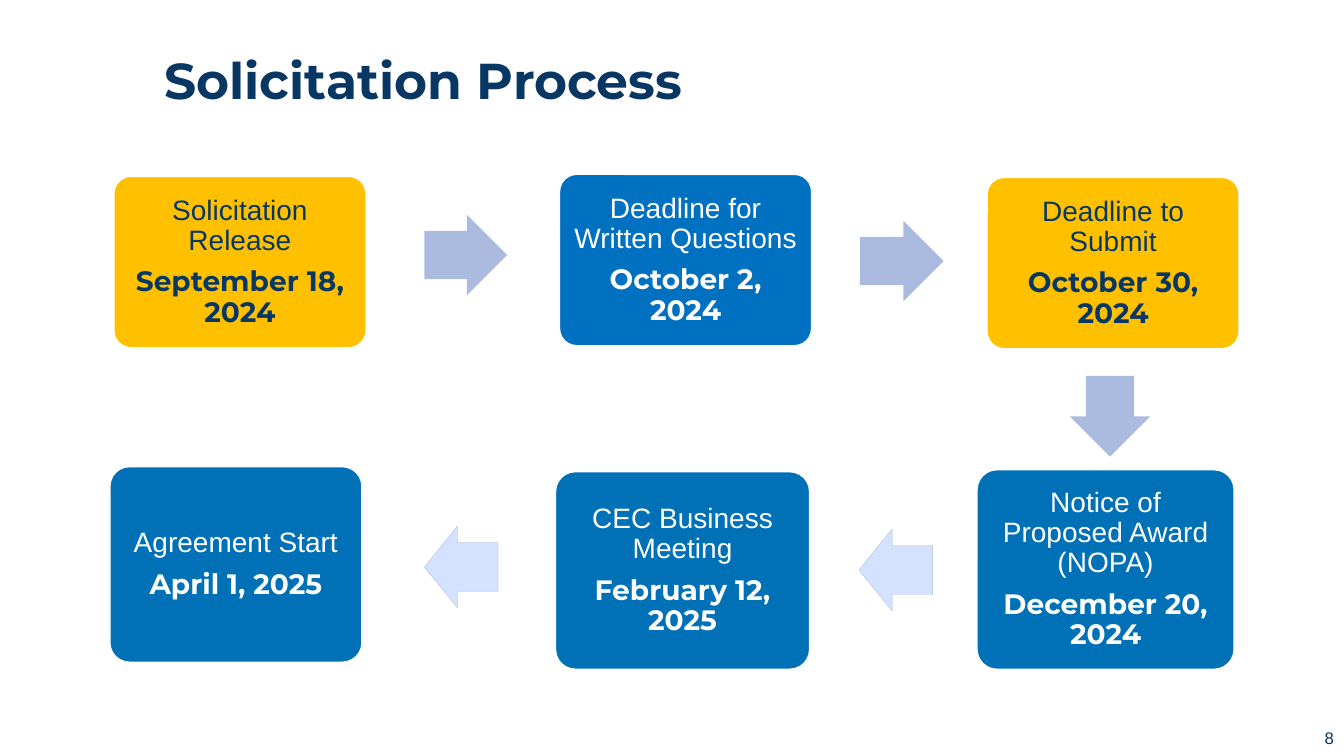
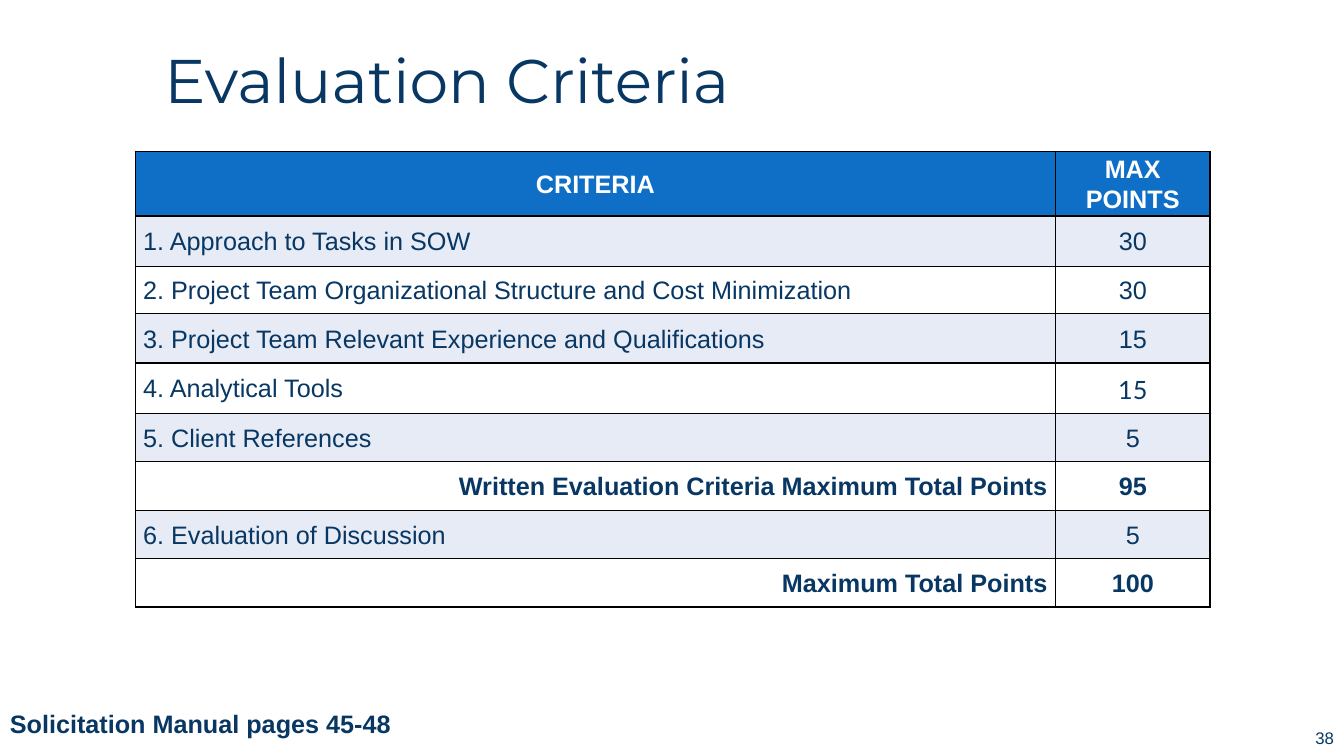
from lxml import etree
from pptx import Presentation
from pptx import util as u
from pptx.dml.color import RGBColor
from pptx.enum import shapes, text
from pptx.oxml.ns import qn

NAVY = RGBColor(0x08, 0x37, 0x63)
WHITE = RGBColor(0xFF, 0xFF, 0xFF)
BLACK = RGBColor(0x00, 0x00, 0x00)
GOLD = RGBColor(0xFF, 0xC0, 0x00)
BLUE = RGBColor(0x00, 0x70, 0xC0)
DEEP_BLUE = RGBColor(0x00, 0x71, 0xB6)
HEADER_BLUE = RGBColor(0x0F, 0x6F, 0xC6)
BAND = RGBColor(0xE7, 0xEB, 0xF5)
ARROW = RGBColor(0xAB, 0xBB, 0xDF)
PALE_ARROW = RGBColor(0xD4, 0xE2, 0xFF)

BODY_FONT = "Arial"
HEAD_FONT = "Montserrat"
LEFT, CENTER, RIGHT = text.PP_ALIGN.LEFT, text.PP_ALIGN.CENTER, text.PP_ALIGN.RIGHT
MIDDLE = text.MSO_ANCHOR.MIDDLE
KINDS = shapes.MSO_SHAPE


class Slides:
    """Holds the deck, its style and the slide being filled."""

    def __init__(self):
        self.deck = Presentation()
        self.deck.slide_width = u.Inches(13.33)
        self.deck.slide_height = u.Inches(7.5)
        self.page = None

    def add_span(self, para, words, size, color=NAVY, bold=False, font=BODY_FONT):
        span = para.add_run()
        span.text = words
        span.font.size = u.Pt(size)
        span.font.name = font
        span.font.bold = bold
        span.font.color.rgb = color

    def start(self, title, number, size, bold=False):
        """Add a page with its title and page number."""
        self.page = self.deck.slides.add_slide(self.deck.slide_layouts[5])
        box = self.page.shapes.title
        box.left, box.top = u.Inches(1.53), u.Inches(0.26)
        box.width, box.height = u.Inches(11.6), u.Inches(1.14)
        frame = box.text_frame
        frame.auto_size = text.MSO_AUTO_SIZE.NONE
        frame.vertical_anchor = MIDDLE
        para = frame.paragraphs[0]
        para.alignment = LEFT
        para.line_spacing = 0.9
        self.add_span(para, title, size, bold=bold, font=HEAD_FONT)
        self.label(str(number), (11.36, 7.12, 1.97, 0.4), 12, RIGHT, anchor=MIDDLE)

    def label(self, words, place, size, align=LEFT, bold=False,
              anchor=text.MSO_ANCHOR.TOP):
        box = self.page.shapes.add_textbox(*map(u.Inches, place))
        frame = box.text_frame
        frame.word_wrap = True
        frame.vertical_anchor = anchor
        para = frame.paragraphs[0]
        para.alignment = align
        self.add_span(para, words, size, bold=bold)

    def shape(self, kind, place, fill, adjustments, line=None, line_width=1):
        shape = self.page.shapes.add_shape(kind, *map(u.Inches, place))
        shape.shadow.inherit = False
        for index, value in enumerate(adjustments):
            shape.adjustments[index] = value
        shape.fill.solid()
        shape.fill.fore_color.rgb = fill
        if line is None:
            shape.line.fill.background()
        else:
            shape.line.color.rgb = line
            shape.line.width = u.Pt(line_width)
        return shape

    def step(self, name, date, place, fill, color=WHITE):
        box = self.shape(KINDS.ROUNDED_RECTANGLE, place, fill, [0.1], WHITE)
        frame = box.text_frame
        frame.word_wrap = True
        frame.vertical_anchor = MIDDLE
        frame.margin_left = frame.margin_right = u.Inches(0.08)
        frame.margin_top = frame.margin_bottom = u.Inches(0.08)
        first, second = frame.paragraphs[0], frame.add_paragraph()
        for para in (first, second):
            para.alignment = CENTER
            para.line_spacing = 0.9
        first.space_after = u.Pt(8)
        self.add_span(first, name, 20, color)
        self.add_span(second, date, 20, color, True, HEAD_FONT)

    def border(self, cell):
        properties = cell._tc.get_or_add_tcPr()
        for side in ("a:lnL", "a:lnR", "a:lnT", "a:lnB"):
            line = etree.SubElement(properties, qn(side), w=str(u.Pt(1)))
            solid = etree.SubElement(line, qn("a:solidFill"))
            etree.SubElement(solid, qn("a:srgbClr"), val=str(BLACK))

    def table(self, rows, left, top, widths, heights):
        """Draw rows of cells, each cell a dict with words and style."""
        size = map(u.Inches, (left, top, sum(widths), sum(heights)))
        grid = self.page.shapes.add_table(len(rows), len(widths), *size).table
        grid.first_row = grid.horz_banding = False
        for column, width in zip(grid.columns, widths):
            column.width = u.Inches(width)
        for row, height in zip(grid.rows, heights):
            row.height = u.Inches(height)
        for row, contents in zip(grid.rows, rows):
            for cell, content in zip(row.cells, contents):
                self.fill_cell(cell, **content)

    def fill_cell(self, cell, words, fill, align, **style):
        self.border(cell)
        cell.fill.solid()
        cell.fill.fore_color.rgb = fill
        cell.vertical_anchor = MIDDLE
        cell.margin_left = cell.margin_right = u.Inches(0.08)
        cell.margin_top = cell.margin_bottom = 0
        para = cell.text_frame.paragraphs[0]
        para.alignment = align
        para.line_spacing = 1.07
        self.add_span(para, words, 18, **style)


def build_process(slides):
    slides.start("Solicitation Process", 8, 36, bold=True)
    steps = [
        ("Solicitation Release", "September 18, 2024", (1.13, 1.75, 2.5, 1.7), GOLD, NAVY),
        ("Deadline for Written Questions", "October 2, 2024", (5.55, 1.73, 2.5, 1.7), BLUE, WHITE),
        ("Deadline to Submit", "October 30, 2024", (9.79, 1.76, 2.5, 1.7), GOLD, NAVY),
        ("Notice of Proposed Award (NOPA)", "December 20, 2024",
         (9.69, 4.66, 2.55, 1.98), DEEP_BLUE, WHITE),
        ("CEC Business Meeting", "February 12, 2025",
         (5.51, 4.68, 2.52, 1.96), DEEP_BLUE, WHITE),
        ("Agreement Start", "April 1, 2025", (1.09, 4.63, 2.5, 1.94), DEEP_BLUE, WHITE),
    ]
    for step in steps:
        slides.step(*step)
    forward = [
        (KINDS.RIGHT_ARROW, (4.21, 2.13, 0.82, 0.8)),
        (KINDS.RIGHT_ARROW, (8.53, 2.19, 0.83, 0.8)),
        (KINDS.DOWN_ARROW, (10.61, 3.73, 0.8, 0.8)),
    ]
    for kind, place in forward:
        slides.shape(kind, place, ARROW, [0.6, 0.5])
    for left, top in ((8.52, 5.25), (4.21, 5.22)):
        slides.shape(KINDS.LEFT_ARROW, (left, top, 0.73, 0.81), PALE_ARROW,
                     [0.6, 0.45], ARROW, 0.25)


def build_criteria(slides):
    slides.start("Evaluation Criteria", 38, 44)
    criteria = [
        ("1. Approach to Tasks in SOW", "30"),
        ("2. Project Team Organizational Structure and Cost Minimization", "30"),
        ("3. Project Team Relevant Experience and Qualifications", "15"),
        ("4. Analytical Tools", "15"),
        ("5. Client References", "5"),
        ("Written Evaluation Criteria Maximum Total Points", "95"),
        ("6. Evaluation of Discussion", "5"),
        ("Maximum Total Points", "100"),
    ]
    rows = [[dict(words=words, fill=HEADER_BLUE, align=CENTER, color=WHITE, bold=True)
             for words in ("CRITERIA", "MAX POINTS")]]
    for index, (name, points) in enumerate(criteria):
        total = name.endswith("Total Points")
        shared = dict(fill=WHITE if index % 2 else BAND, bold=total)
        font = "Lato" if name == "4. Analytical Tools" else BODY_FONT
        rows.append([
            dict(words=name, align=RIGHT if total else LEFT, **shared),
            dict(words=points, align=CENTER, font=font, **shared),
        ])
    heights = [0.59, 0.5, 0.47, 0.49, 0.5] + [0.48] * 4
    slides.table(rows, 1.34, 1.5, [9.13, 1.53], heights)
    slides.label("Solicitation Manual pages 45-48", (0, 6.98, 4.39, 0.4), 18, bold=True)


def main():
    slides = Slides()
    build_process(slides)
    build_criteria(slides)
    slides.deck.save("out.pptx")


if __name__ == "__main__":
    main()
